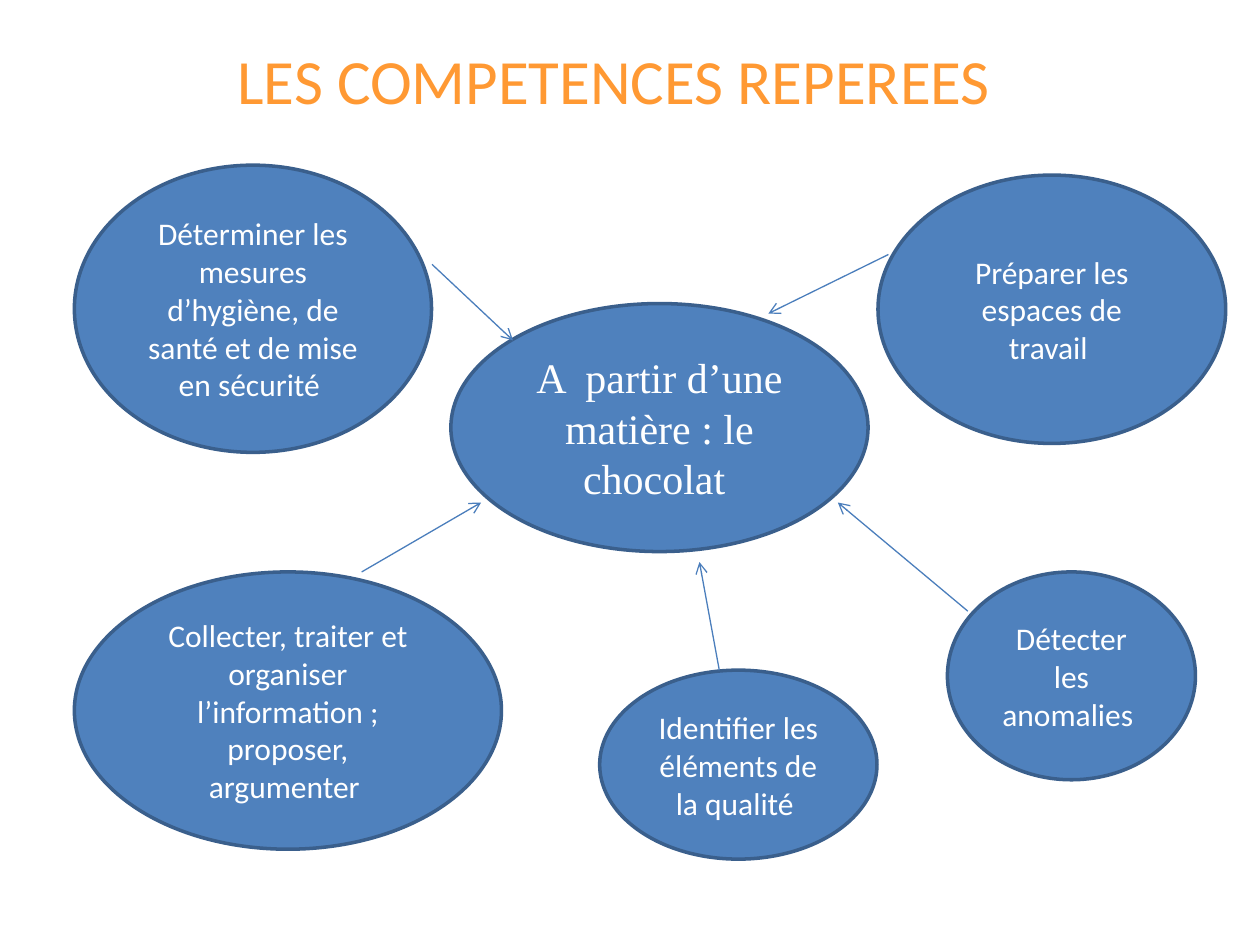
from dataclasses import dataclass

from lxml.etree import SubElement
from pptx import Presentation
from pptx.dml.color import RGBColor
from pptx.enum.shapes import MSO_CONNECTOR, MSO_SHAPE
from pptx.enum.text import MSO_ANCHOR, PP_ALIGN
from pptx.oxml.ns import qn
from pptx.util import Cm, Pt


@dataclass(frozen=True)
class Theme:
    title: RGBColor = RGBColor(0xFF, 0x99, 0x33)
    fill: RGBColor = RGBColor(0x4F, 0x81, 0xBD)
    outline: RGBColor = RGBColor(0x3A, 0x5F, 0x8C)
    arrow: RGBColor = RGBColor(0x4B, 0x7E, 0xBC)
    text: RGBColor = RGBColor(0xFF, 0xFF, 0xFF)
    title_size: Pt = Pt(36)
    topic_size: Pt = Pt(24)
    skill_size: Pt = Pt(18)
    outline_width: Pt = Pt(2)
    arrow_width: Pt = Pt(0.75)
    body_font: str = "Calibri"
    topic_font: str = "Times New Roman"


theme = Theme()


def write_text(shape, text, font_name, size, color):
    frame = shape.text_frame
    frame.word_wrap = True
    frame.vertical_anchor = MSO_ANCHOR.MIDDLE
    paragraph = frame.paragraphs[0]
    paragraph.alignment = PP_ALIGN.CENTER
    run = paragraph.add_run()
    run.text = text
    run.font.name = font_name
    run.font.size = size
    run.font.color.rgb = color


def add_bubble(slide, box, text, font_name, size):
    shape = slide.shapes.add_shape(MSO_SHAPE.OVAL, *map(Cm, box))
    shape.shadow.inherit = False
    shape.fill.solid()
    shape.fill.fore_color.rgb = theme.fill
    shape.line.color.rgb = theme.outline
    shape.line.width = theme.outline_width
    write_text(shape, text, font_name, size, theme.text)


presentation = Presentation()
presentation.slide_width = Cm(25.4)
presentation.slide_height = Cm(19.05)
slide = presentation.slides.add_slide(presentation.slide_layouts[6])

title = slide.shapes.add_textbox(Cm(1.09), Cm(0), Cm(22.86), Cm(3.18))
write_text(title, "LES COMPETENCES REPEREES ", theme.body_font, theme.title_size, theme.title)

add_bubble(slide, (9.09, 6.12, 8.41, 5), "A  partir d’une matière : le chocolat ",
           theme.topic_font, theme.topic_size)

skills = [
    ((1.5, 3.33, 7.2, 5.79), "Déterminer les mesures d’hygiène, de santé et de mise en sécurité "),
    ((1.5, 11.53, 8.61, 5.59), "Collecter, traiter et organiser l’information ; proposer, argumenter "),
    ((17.7, 3.53, 7.01, 5.41), "Préparer les espaces de travail "),
    ((12.09, 13.51, 5.59, 3.81), "Identifier les éléments de la qualité "),
    ((19.1, 11.53, 5, 4.19), "Détecter les anomalies "),
]
for box, text in skills:
    add_bubble(slide, box, text, theme.body_font, theme.skill_size)

arrows = [
    (7.29, 11.53, 9.7, 10.13),
    (8.71, 5.33, 10.34, 6.86),
    (14.5, 13.51, 14.1, 11.33),
    (19.51, 12.32, 16.89, 10.13),
    (17.91, 5.13, 15.49, 6.32),
]
for ends in arrows:
    connector = slide.shapes.add_connector(MSO_CONNECTOR.STRAIGHT, *map(Cm, ends))
    connector.line.color.rgb = theme.arrow
    connector.line.width = theme.arrow_width
    SubElement(connector.line._get_or_add_ln(), qn("a:tailEnd"), type="arrow")
    SubElement(connector._element.spPr, qn("a:effectLst"))

presentation.save("out.pptx")
